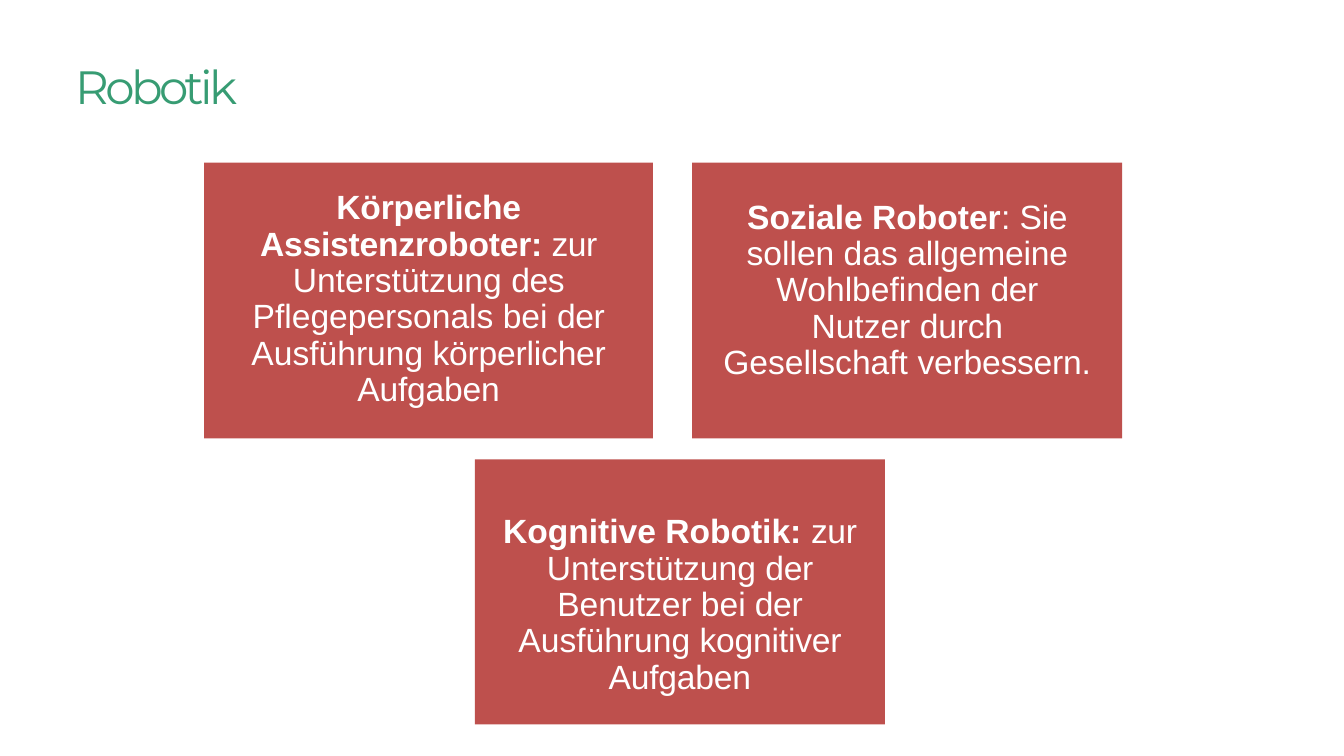
from pptx import Presentation
from pptx.dml.color import RGBColor
from pptx.enum.shapes import MSO_SHAPE
from pptx.enum.text import MSO_ANCHOR, MSO_AUTO_SIZE, PP_ALIGN
from pptx.util import Pt

RECT = MSO_SHAPE.RECTANGLE
TOP = MSO_ANCHOR.TOP
FIXED = MSO_AUTO_SIZE.NONE
LEFT, CENTER = PP_ALIGN.LEFT, PP_ALIGN.CENTER

COLORS = {"card": "BE504D", "text": "FFFFFF", "title": "379C73"}
FORMATS = {
    "title": {"name": "Montserrat", "size": Pt(25), "bold": False},
    "lead": {"name": "Arial", "size": Pt(18), "bold": True},
    "text": {"name": "Arial", "size": Pt(18), "bold": False},
}

# Each card: box, side and top insets, runs as (text, letter spacing in 1/100 pt)
CARDS = [
    ((109.4, 87.1, 240.4, 147.7), 24, 15.1, [
        ("Körperliche Assistenzroboter: ", -10), ("zur ", -20),
        ("Unterstützung ", 0), ("des ", -20), ("Pflegepersonals bei ", 0),
        ("der ", -20), ("Ausführung ", 0), ("körperlicher Aufgaben", -10)]),
    ((370.8, 87.1, 230.4, 147.7), 16.4, 20.1, [
        ("Soziale Roboter", 0), (": ", 0), ("Sie ", -20), ("sollen das ", 0),
        ("allgemeine ", -10), ("Wohlbefinden ", 0), ("der ", -20),
        ("Nutzer ", 0), ("durch ", -10), ("Gesellschaft ", 0),
        ("verbessern.", -10)]),
    ((254.4, 246.1, 219.6, 142), 14, 29.7, [
        ("Kognitive Robotik: ", 0), ("zur ", -20), ("Unterstützung ", 0),
        ("der ", -20), ("Benutzer bei", 0), (" der ", -20),
        ("Ausführung ", 0), ("kognitiver Aufgaben", -10)]),
]


def set_frame(frame, side, top):
    values = {"auto_size": FIXED, "word_wrap": True, "vertical_anchor": TOP,
              "margin_left": Pt(side), "margin_right": Pt(side),
              "margin_top": Pt(top), "margin_bottom": 0}
    for key, value in values.items():
        setattr(frame, key, value)


def add_run(para, text, style, color, gap):
    run = para.add_run()
    run.text = text
    for key, value in FORMATS[style].items():
        setattr(run.font, key, value)
    run.font.color.rgb = RGBColor.from_string(COLORS[color])
    run.font._element.set("spc", str(gap))


def add_title(slide, box, text):
    title = slide.shapes.title
    title.left, title.top, title.width, title.height = map(Pt, box)
    set_frame(title.text_frame, 0.7, 0.9)
    para = title.text_frame.paragraphs[0]
    para.alignment = LEFT
    add_run(para, text, "title", "title", -190)


def add_card(slide, box, side, top, runs):
    card = slide.shapes.add_shape(RECT, *map(Pt, box))
    card.shadow.inherit = False
    card.fill.solid()
    card.fill.fore_color.rgb = RGBColor.from_string(COLORS["card"])
    card.line.fill.background()
    set_frame(card.text_frame, side, top)
    para = card.text_frame.paragraphs[0]
    para.alignment = CENTER
    para.line_spacing = 0.9
    for i, (text, gap) in enumerate(runs):
        add_run(para, text, "text" if i else "lead", "text", gap)


def main():
    deck = Presentation()
    deck.slide_width, deck.slide_height = Pt(720), Pt(405)
    slide = deck.slides.add_slide(deck.slide_layouts[5])

    # Heading
    add_title(slide, (39.6, 30.2, 93.6, 31.7), "Robotik")

    # Three kinds of robots
    for card in CARDS:
        add_card(slide, *card)

    deck.save("out.pptx")


if __name__ == "__main__":
    main()
